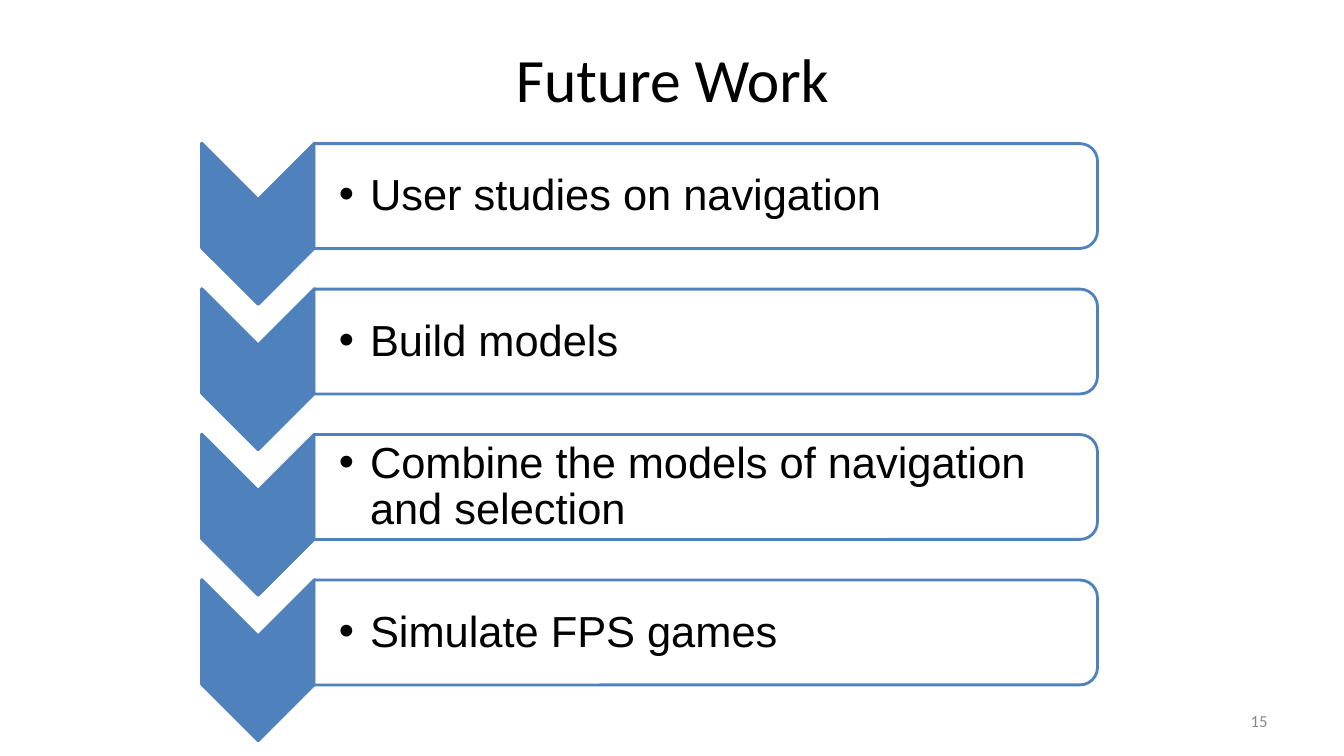
"""Build the Future Work slide with a vertical chevron list."""
from dataclasses import dataclass

from lxml import etree
from pptx import Presentation, util as u
from pptx.dml.color import RGBColor
from pptx.enum import shapes, text
from pptx.oxml import ns
from pptx.shapes.autoshape import Shape
from pptx.shapes.shapetree import GroupShapes

BLACK = RGBColor(0x00, 0x00, 0x00)
WHITE = RGBColor(0xFF, 0xFF, 0xFF)
GRAY = RGBColor(0x88, 0x88, 0x88)
BLUE = RGBColor(0x4F, 0x81, 0xBD)

STEPS = (
    "User studies on navigation",
    "Build models",
    "Combine the models of navigation and selection",
    "Simulate FPS games",
)
STEP_PITCH = (5.99 - 1.66) / 3
HANGING_INDENT = u.Inches(0.31)


@dataclass(frozen=True)
class Box:
    left: float
    top: float
    width: float
    height: float

    def lowered(self, distance: float) -> "Box":
        return Box(self.left, self.top + distance, self.width, self.height)

    def lengths(self) -> tuple[u.Length, ...]:
        return tuple(u.Inches(value) for value in (self.left, self.top, self.width, self.height))


@dataclass(frozen=True)
class TextStyle:
    font: str
    size: int
    color: RGBColor
    align: text.PP_ALIGN
    margins: tuple[float, float, float, float] = (0.1, 0.05, 0.1, 0.05)


@dataclass(frozen=True)
class Part:
    kind: shapes.MSO_SHAPE
    box: Box
    fill: RGBColor
    opacity: int = 100


TITLE = TextStyle("Calibri", 44, BLACK, text.PP_ALIGN.CENTER)
NUMBER = TextStyle("Calibri", 12, GRAY, text.PP_ALIGN.RIGHT)
STEP = TextStyle("Arial", 31, BLACK, text.PP_ALIGN.LEFT, (0.24, 0.02, 0.02, 0.02))
STEP_PARTS = (
    Part(shapes.MSO_SHAPE.CHEVRON, Box(1.76, 1.66, 1.6, 1.12), BLUE),
    Part(shapes.MSO_SHAPE.ROUND_2_SAME_RECTANGLE, Box(6.48, -1.94, 1.04, 7.77), WHITE, 90),
)
STEP_TEXT = Box(3.12, 1.48, 7.72, 0.94)


def set_attributes(target: object, values: dict[str, object]) -> None:
    for name, value in values.items():
        setattr(target, name, value)


def add_text(tree: GroupShapes, box: Box, words: str, style: TextStyle) -> Shape:
    shape = tree.add_textbox(*box.lengths())
    left, top, right, bottom = (u.Inches(margin) for margin in style.margins)
    set_attributes(shape.text_frame, {
        "word_wrap": True,
        "vertical_anchor": text.MSO_ANCHOR.MIDDLE,
        "margin_left": left,
        "margin_top": top,
        "margin_right": right,
        "margin_bottom": bottom,
    })
    paragraph = shape.text_frame.paragraphs[0]
    paragraph.alignment = style.align
    run = paragraph.add_run()
    run.text = words
    set_attributes(run.font, {"name": style.font, "size": u.Pt(style.size)})
    run.font.color.rgb = style.color
    return shape


def add_part(tree: GroupShapes, part: Part, distance: float) -> None:
    shape = tree.add_shape(part.kind, *part.box.lowered(distance).lengths())
    shape.rotation = 90
    shape.shadow.inherit = False
    shape.fill.solid()
    shape.fill.fore_color.rgb = part.fill
    shape.line.color.rgb = BLUE
    shape.line.width = u.Pt(2)
    if part.opacity < 100:
        color = shape.fill._xPr.find(f"{ns.qn('a:solidFill')}/{ns.qn('a:srgbClr')}")
        etree.SubElement(color, ns.qn("a:alpha"), val=str(part.opacity * 1000))


def add_bullet(shape: Shape) -> None:
    paragraph = shape.text_frame.paragraphs[0]
    set_attributes(paragraph, {"level": 1, "line_spacing": 0.9, "space_after": u.Pt(4.65)})
    properties = paragraph._p.get_or_add_pPr()
    properties.set("marL", str(HANGING_INDENT))
    properties.set("indent", str(-HANGING_INDENT))
    etree.SubElement(properties, ns.qn("a:buFont"), typeface="Arial")
    etree.SubElement(properties, ns.qn("a:buChar"), char="•")


def main() -> None:
    presentation = Presentation()
    set_attributes(presentation, {"slide_width": u.Inches(13.33), "slide_height": u.Inches(7.5)})
    slide = presentation.slides.add_slide(presentation.slide_layouts[6])
    add_text(slide.shapes, Box(0.67, 0.15, 12, 1.25), "Future Work", TITLE)
    add_text(slide.shapes, Box(9.56, 6.95, 3.11, 0.4), "15", NUMBER)
    group = slide.shapes.add_group_shape()
    for index, words in enumerate(STEPS):
        distance = index * STEP_PITCH
        for part in STEP_PARTS:
            add_part(group.shapes, part, distance)
        add_bullet(add_text(group.shapes, STEP_TEXT.lowered(distance), words, STEP))
    presentation.save("out.pptx")


if __name__ == "__main__":
    main()
